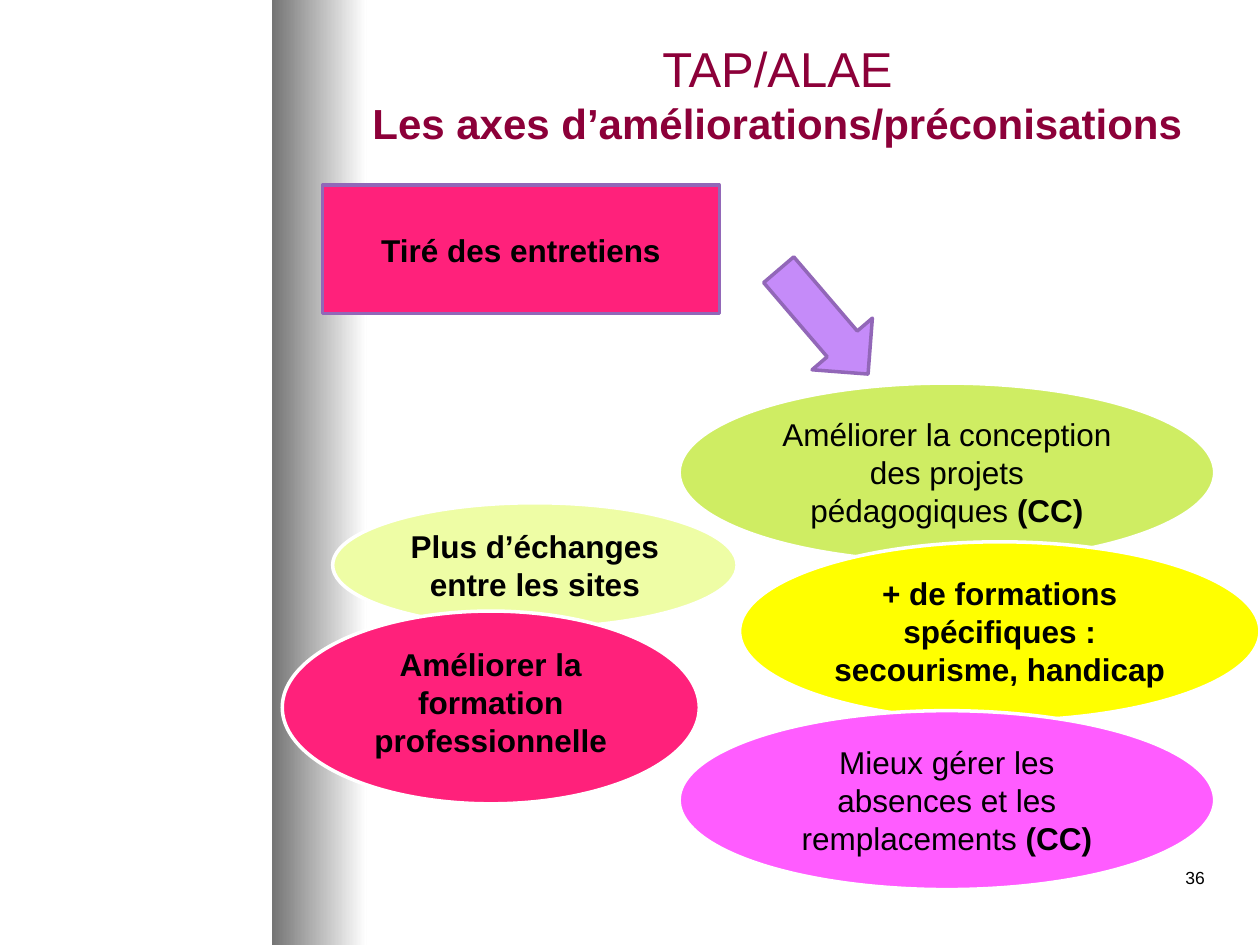
from dataclasses import dataclass
from typing import Optional

from pptx import Presentation
from pptx.dml.color import RGBColor
from pptx.enum.shapes import MSO_SHAPE as Preset
from pptx.enum.text import MSO_ANCHOR as Anchor, PP_ALIGN as Align
from pptx.util import Inches, Pt

COLUMNS, ROWS = 100, 75
SLIDE_WIDTH, SLIDE_HEIGHT = Inches(10), Inches(7.5)
FONT = "Arial"

BLACK = RGBColor(0x00, 0x00, 0x00)
WHITE = RGBColor(0xFF, 0xFF, 0xFF)
GREY = RGBColor(0x75, 0x75, 0x75)
BURGUNDY = RGBColor(0x8C, 0x00, 0x39)
PALE_LIME = RGBColor(0xEE, 0xFD, 0xA5)
LIME = RGBColor(0xCF, 0xED, 0x63)
YELLOW = RGBColor(0xFF, 0xFF, 0x00)
PINK = RGBColor(0xFF, 0x21, 0x7B)
MAGENTA = RGBColor(0xFF, 0x5C, 0xFF)
LILAC = RGBColor(0xC5, 0x8B, 0xF9)
PURPLE = RGBColor(0x92, 0x67, 0xB8)


@dataclass(frozen=True)
class Area:
    """A place on the slide, in grid columns and rows."""

    column: float
    row: float
    columns: float
    rows: float

    def lengths(self) -> tuple[int, int, int, int]:
        """Return left, top, width and height."""
        cell_width, cell_height = SLIDE_WIDTH / COLUMNS, SLIDE_HEIGHT / ROWS
        return (
            round(self.column * cell_width),
            round(self.row * cell_height),
            round(self.columns * cell_width),
            round(self.rows * cell_height),
        )


@dataclass(frozen=True)
class Piece:
    """A stretch of text in one style."""

    text: str
    bold: bool = True
    size: float = 18


@dataclass(frozen=True)
class Figure:
    """A filled and outlined shape with its text."""

    preset: Preset
    area: Area
    fill: RGBColor
    line: RGBColor
    pieces: tuple[Piece, ...] = ()
    anchor: Anchor = Anchor.TOP
    rotation: float = 0


def ellipse(area: Area, fill: RGBColor, *pieces: Piece, anchor: Anchor = Anchor.TOP) -> Figure:
    """Describe one improvement as a white-edged ellipse."""
    return Figure(Preset.OVAL, area, fill, WHITE, pieces, anchor)


CC = Piece("(CC)")
TITLE = (
    Piece("TAP/ALAE", bold=False, size=28),
    Piece("Les axes d’améliorations/préconisations", size=24),
)
FIGURES = (
    ellipse(Area(26.4, 39.9, 32.1, 9.9), PALE_LIME,
            Piece("Plus d’échanges entre les sites"), anchor=Anchor.MIDDLE),
    ellipse(Area(53.9, 30.4, 42.5, 14.2), LIME,
            Piece("Améliorer la conception des projets pédagogiques ", bold=False), CC),
    ellipse(Area(58.7, 43, 41.3, 14.2), YELLOW,
            Piece("+ de formations spécifiques : secourisme, handicap")),
    ellipse(Area(22.4, 48.5, 33.1, 15.3), PINK,
            Piece("Améliorer la formation professionnelle")),
    ellipse(Area(53.9, 56.4, 42.5, 14.2), MAGENTA,
            Piece("Mieux gérer les absences et les remplacements ", bold=False), CC),
    Figure(Preset.RECTANGLE, Area(25.6, 14.7, 31.5, 10.2), PINK, PURPLE,
           (Piece("Tiré des entretiens"),), Anchor.MIDDLE),
    Figure(Preset.DOWN_ARROW, Area(62.2, 20.1, 6.3, 10.9), LILAC, PURPLE, rotation=319.4),
)


def write(shape, pieces: tuple[Piece, ...], color: RGBColor = BLACK,
          align: Align = Align.CENTER, anchor: Anchor = Anchor.TOP,
          separator: Optional[str] = None) -> None:
    """Write the pieces as one paragraph, with line breaks if a separator is given."""
    text_frame = shape.text_frame
    text_frame.word_wrap = True
    text_frame.vertical_anchor = anchor
    paragraph = text_frame.paragraphs[0]
    paragraph.alignment = align
    if separator:
        paragraph.text = separator.join(piece.text for piece in pieces)
    else:
        for piece in pieces:
            paragraph.add_run().text = piece.text
    for run, piece in zip(paragraph.runs, pieces):
        run.font.name = FONT
        run.font.size = Pt(piece.size)
        run.font.bold = piece.bold
        run.font.color.rgb = color


def draw_band(slide, area: Area) -> None:
    """Draw the vertical band that fades from grey to white."""
    band = slide.shapes.add_shape(Preset.RECTANGLE, *area.lengths())
    band.shadow.inherit = False
    band.line.fill.background()
    band.fill.gradient()
    band.fill.gradient_angle = 0
    for stop, color in zip(band.fill.gradient_stops, (GREY, WHITE)):
        stop.color.rgb = color


def draw_figure(slide, figure: Figure) -> None:
    """Draw one shape and its text."""
    shape = slide.shapes.add_shape(figure.preset, *figure.area.lengths())
    shape.shadow.inherit = False
    shape.rotation = figure.rotation
    shape.fill.solid()
    shape.fill.fore_color.rgb = figure.fill
    shape.line.color.rgb = figure.line
    shape.line.width = Pt(2)
    if figure.pieces:
        write(shape, figure.pieces, anchor=figure.anchor)


def main() -> None:
    """Build and save the slide."""
    presentation = Presentation()
    presentation.slide_width, presentation.slide_height = SLIDE_WIDTH, SLIDE_HEIGHT
    slide = presentation.slides.add_slide(presentation.slide_layouts[6])
    draw_band(slide, Area(21.6, 0, 7.5, ROWS))
    number = slide.shapes.add_textbox(*Area(75.8, 68.3, 20.8, 5).lengths())
    write(number, (Piece("36", bold=False, size=10),), align=Align.RIGHT)
    title = slide.shapes.add_textbox(*Area(26.7, 2.5, 70, 9.8).lengths())
    write(title, TITLE, BURGUNDY, anchor=Anchor.MIDDLE, separator="\v")
    for figure in FIGURES:
        draw_figure(slide, figure)
    presentation.save("out.pptx")


if __name__ == "__main__":
    main()
